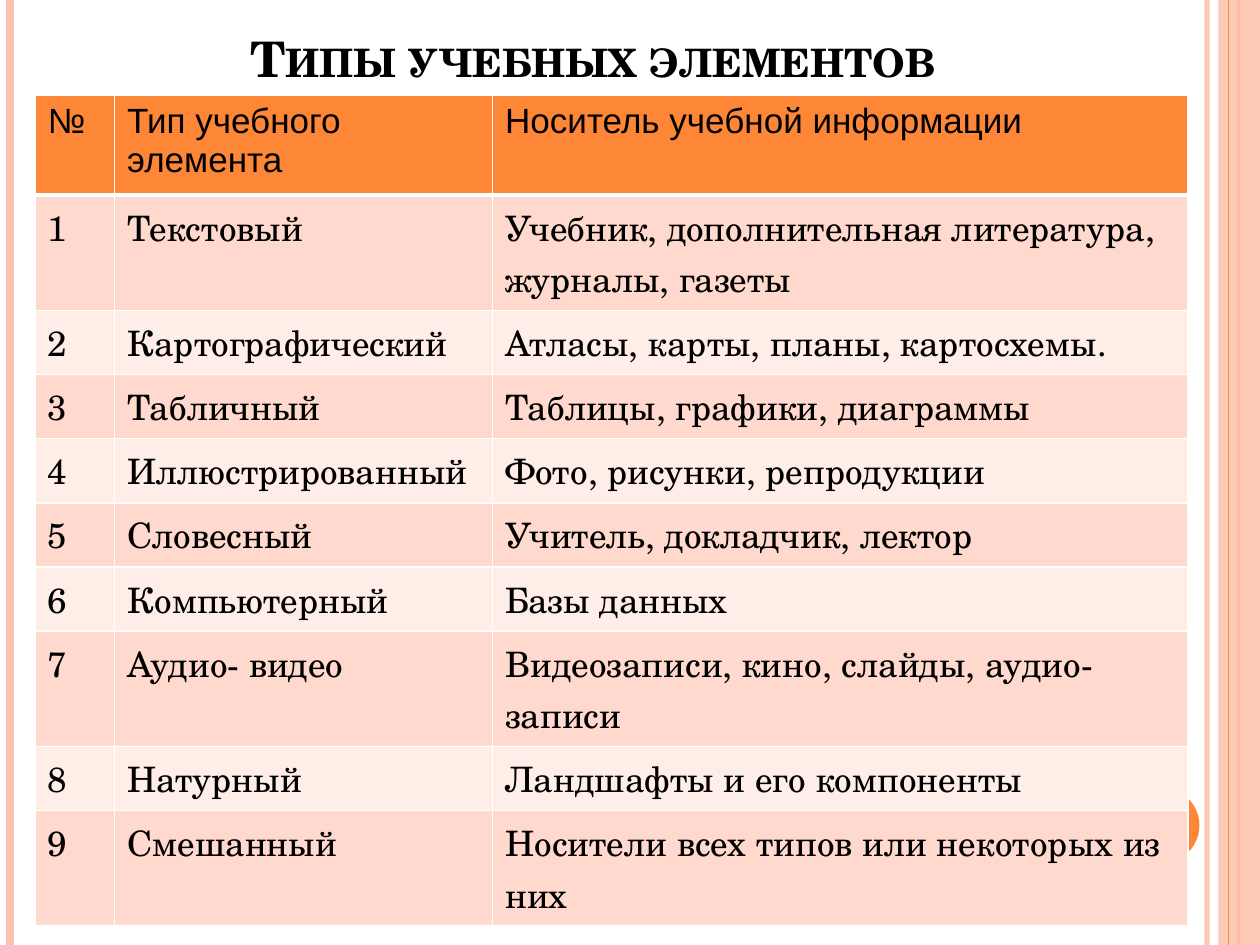
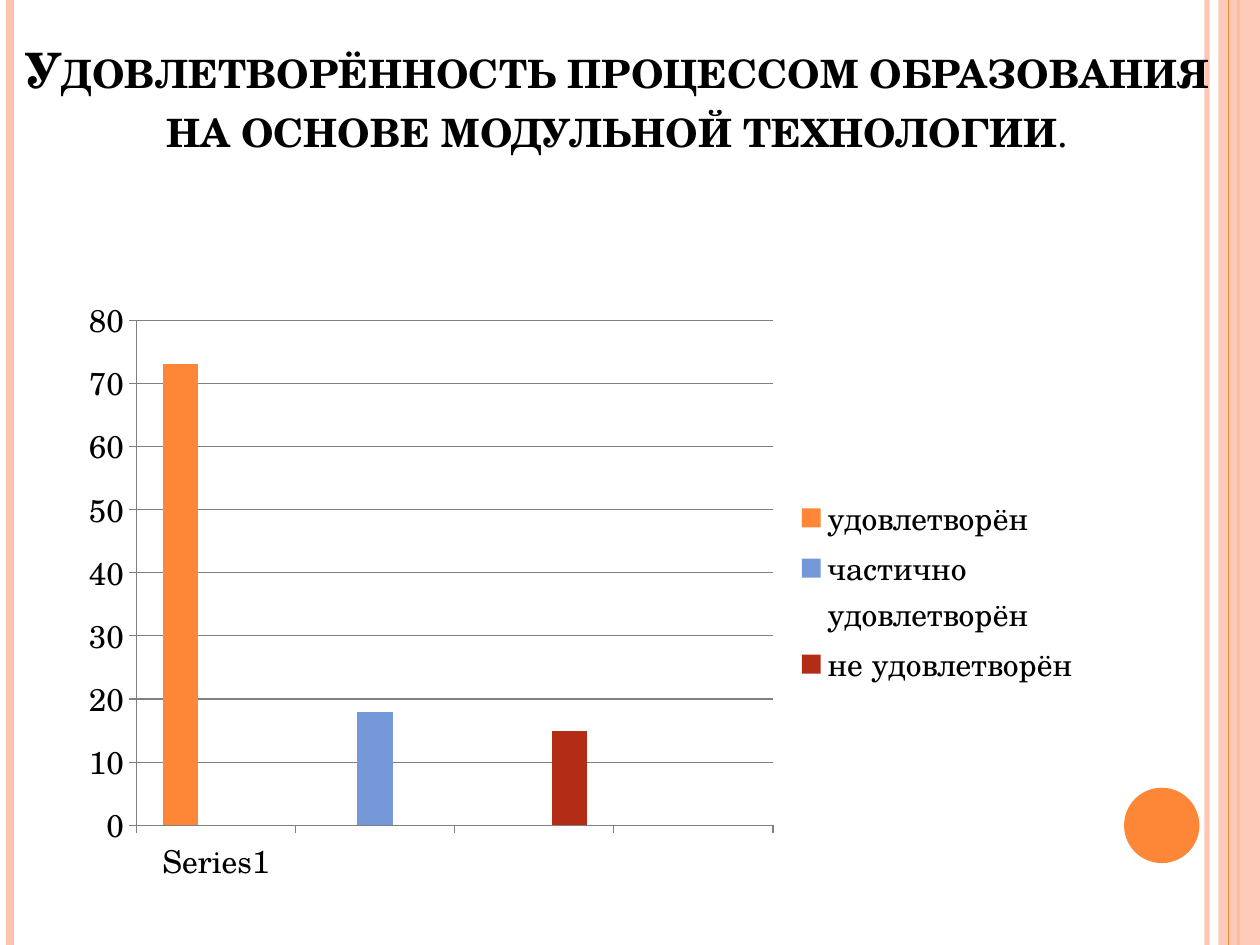
from lxml.etree import SubElement
from pptx import Presentation
from pptx.chart.data import CategoryChartData
from pptx.dml.color import RGBColor
from pptx.enum.chart import XL_CHART_TYPE, XL_LEGEND_POSITION, XL_TICK_MARK
from pptx.enum.shapes import MSO_CONNECTOR, MSO_SHAPE
from pptx.enum.text import MSO_ANCHOR, MSO_AUTO_SIZE, PP_ALIGN
from pptx.oxml import parse_xml
from pptx.oxml.ns import nsdecls, qn
from pptx.util import Cm, Pt

SERIF, SANS = "TeX Gyre Schola", "Arial"
BLACK, WHITE, GRAY = "000000", "FFFFFF", "808080"
ORANGE, PEACH, BLUE, RED = "FE8637", "FEC3AE", "7598D9", "B32C16"
BANDS = ["FFD9CE", "FFEDE8"]
WIDTH, HEIGHT = 25.4, 19.05

LEFT_LINES = [(24.33, PEACH, 3, 93), (0.2, PEACH, 4.5, 100), (24.97, ORANGE, 1.5, 100)]
RIGHT_LINE = (24.77, ORANGE, 0.75, 100)

TYPES_TITLE = "Типы учебных элементов"
HEADER = ["№", "Тип учебного элемента", "Носитель учебной информации"]
TYPES = [
    ("Текстовый", "Учебник, дополнительная литература, журналы, газеты"),
    ("Картографический", "Атласы, карты, планы, картосхемы."),
    ("Табличный", "Таблицы, графики, диаграммы"),
    ("Иллюстрированный", "Фото, рисунки, репродукции"),
    ("Словесный", "Учитель, докладчик, лектор"),
    ("Компьютерный", "Базы данных"),
    ("Аудио- видео", "Видеозаписи, кино, слайды, аудио- записи"),
    ("Натурный", "Ландшафты и его компоненты"),
    ("Смешанный", "Носители всех типов или некоторых из них"),
]
COL_WIDTHS = [1.6, 7.62, 14.02]
ROW_HEIGHTS = [2, 2.24] + [1.27] * 5 + [1.88, 1.27, 2.13]

POLL_TITLE = "Удовлетворённость процессом образования на основе модульной технологии"
CATEGORIES = ["Series1", "", "", ""]
ANSWERS = [
    ("удовлетворён", 73, ORANGE),
    ("частично удовлетворён", 18, BLUE),
    ("не удовлетворён", 15, RED),
]


def rgb(color):
    """Turn a hex string into a colour."""
    return RGBColor.from_string(color)


def set_alpha(fill, percent):
    """Make a solid fill partly transparent."""
    clr = fill._xPr.find(qn("a:solidFill"))[0]
    SubElement(clr, qn("a:alpha"), val=str(percent * 1000))


def add_text(p, text, size=20, font=SERIF, color=BLACK, bold=False, small=False):
    """Add a formatted run to a paragraph."""
    r = p.add_run()
    r.text = text
    r.font.size, r.font.name, r.font.bold = Pt(size), font, bold
    r.font.color.rgb = rgb(color)
    if small:
        r._r.get_or_add_rPr().set("cap", "small")


def add_rule(s, x, color, width, alpha):
    """Draw a vertical line over the whole slide height."""
    line = s.shapes.add_connector(MSO_CONNECTOR.STRAIGHT, Cm(x), 0, Cm(x), Cm(HEIGHT))
    line.line.color.rgb = rgb(color)
    line.line.width = Pt(width)
    if alpha < 100:
        set_alpha(line.line.fill, alpha)
    SubElement(line._element.spPr, qn("a:effectLst"))


def add_shape(s, kind, x, y, w, h, color, alpha=100):
    """Draw a plain filled shape without outline."""
    sp = s.shapes.add_shape(kind, Cm(x), Cm(y), Cm(w), Cm(h))
    sp.shadow.inherit = False
    sp.fill.solid()
    sp.fill.fore_color.rgb = rgb(color)
    sp.line.fill.background()
    if alpha < 100:
        set_alpha(sp.fill, alpha)


def add_slide(prs, runs, box, anchor):
    """Add a slide with the shared frame and a small-caps title."""
    s = prs.slides.add_slide(prs.slide_layouts[5])
    for rule in LEFT_LINES:
        add_rule(s, *rule)
    add_shape(s, MSO_SHAPE.RECTANGLE, 24.56, 0, WIDTH - 24.56, HEIGHT, PEACH, 87)
    add_rule(s, *RIGHT_LINE)
    add_shape(s, MSO_SHAPE.OVAL, 22.66, 15.88, 1.52, 1.52, ORANGE)
    title = s.shapes.title
    s.shapes._spTree.append(title._element)
    title.left, title.top, title.width, title.height = map(Cm, box)
    tf = title.text_frame
    tf.word_wrap, tf.auto_size, tf.vertical_anchor = True, MSO_AUTO_SIZE.NONE, anchor
    tf.margin_top = tf.margin_bottom = 0
    p = tf.paragraphs[0]
    p.alignment = PP_ALIGN.CENTER
    for text, fmt in runs:
        add_text(p, text, small=True, **fmt)
    return s


def set_borders(cell, bottom=1):
    """Give a cell white borders."""
    tc_pr = cell._tc.get_or_add_tcPr()
    for i, (side, width) in enumerate([("L", 1), ("R", 1), ("T", 1), ("B", bottom)]):
        tc_pr.insert(i, parse_xml(
            f'<a:ln{side} {nsdecls("a")} w="{Pt(width)}"><a:solidFill>'
            f'<a:srgbClr val="{WHITE}"/></a:solidFill></a:ln{side}>'))


def add_types_table(s):
    """Fill the table of learning element types."""
    rows = [HEADER] + [(str(i), *row) for i, row in enumerate(TYPES, 1)]
    frame = s.shapes.add_table(len(rows), len(HEADER), Cm(0.71), Cm(1.93),
                               Cm(sum(COL_WIDTHS)), Cm(sum(ROW_HEIGHTS)))
    table = frame.table
    table.first_row = table.horz_banding = False
    for col, width in zip(table.columns, COL_WIDTHS):
        col.width = Cm(width)
    for i, (row, height) in enumerate(zip(rows, ROW_HEIGHTS)):
        table.rows[i].height = Cm(height)
        for j, text in enumerate(row):
            cell = table.cell(i, j)
            cell.fill.solid()
            cell.fill.fore_color.rgb = rgb(BANDS[(i - 1) % 2] if i else ORANGE)
            set_borders(cell, bottom=1 if i else 3)
            p = cell.text_frame.paragraphs[0]
            if i == 0:
                p.space_before = Pt(4)
            add_text(p, text, font=SERIF if i else SANS)


def set_layout(parent, index, inner=False, **place):
    """Fix the place of a chart part as fractions of the chart."""
    for old in parent.findall(qn("c:layout")):
        parent.remove(old)
    target = '<c:layoutTarget val="inner"/>' if inner else ""
    modes = "".join(f'<c:{k}Mode val="edge"/>' for k in "xy")
    sizes = "".join(f'<c:{k} val="{v}"/>' for k, v in place.items())
    parent.insert(index, parse_xml(
        f'<c:layout {nsdecls("c")}><c:manualLayout>{target}{modes}{sizes}'
        f'</c:manualLayout></c:layout>'))


def add_poll_chart(s):
    """Draw the column chart with one bar per answer."""
    data = CategoryChartData()
    data.categories = CATEGORIES
    for i, (name, value, _) in enumerate(ANSWERS):
        data.add_series(name, [value if i == k else None for k in range(len(CATEGORIES))])
    chart = s.shapes.add_chart(XL_CHART_TYPE.COLUMN_CLUSTERED, Cm(1.3), Cm(5.72),
                               Cm(20.7), Cm(12.27), data).chart
    chart.has_title = False
    chart.font.size, chart.font.name = Pt(18), SERIF
    chart.font.color.rgb = rgb(BLACK)
    plot = chart.plots[0]
    plot.gap_width, plot.overlap, plot.vary_by_categories = 150, 0, False
    for series, (_, _, color) in zip(plot.series, ANSWERS):
        series.format.fill.solid()
        series.format.fill.fore_color.rgb = rgb(color)
    values = chart.value_axis
    values.minimum_scale, values.maximum_scale, values.major_unit = 0, 80, 10
    values.has_major_gridlines = True
    chart.category_axis.has_major_gridlines = False
    for axis in (values, chart.category_axis):
        axis.major_tick_mark, axis.minor_tick_mark = XL_TICK_MARK.OUTSIDE, XL_TICK_MARK.NONE
    for part in (values, chart.category_axis, values.major_gridlines):
        part.format.line.color.rgb = rgb(GRAY)
        part.format.line.width = Pt(0.75)
    chart.has_legend = True
    chart.legend.position = XL_LEGEND_POSITION.RIGHT
    chart.legend.include_in_layout = False
    plot_area = chart._chartSpace.find(qn("c:chart")).find(qn("c:plotArea"))
    set_layout(plot_area, 0, inner=True, x=0.07, y=0.06, w=0.62, h=0.83)
    set_layout(chart.legend._element, 1, x=0.71, y=0.34, w=0.28, h=0.33)


def main():
    """Build both slides and save them."""
    prs = Presentation()
    prs.slide_width, prs.slide_height = Cm(WIDTH), Cm(HEIGHT)
    s = add_slide(prs, [(TYPES_TITLE, {"size": 28, "bold": True})],
                  (1.9, 0.76, 20.12, 1), MSO_ANCHOR.BOTTOM)
    add_types_table(s)
    s = add_slide(prs, [(POLL_TITLE, {"size": 27.9, "bold": True}), (".", {"size": 27.9})],
                  (0, 0.8, 24.89, 4.69), MSO_ANCHOR.TOP)
    add_poll_chart(s)
    prs.save("out.pptx")


if __name__ == "__main__":
    main()
